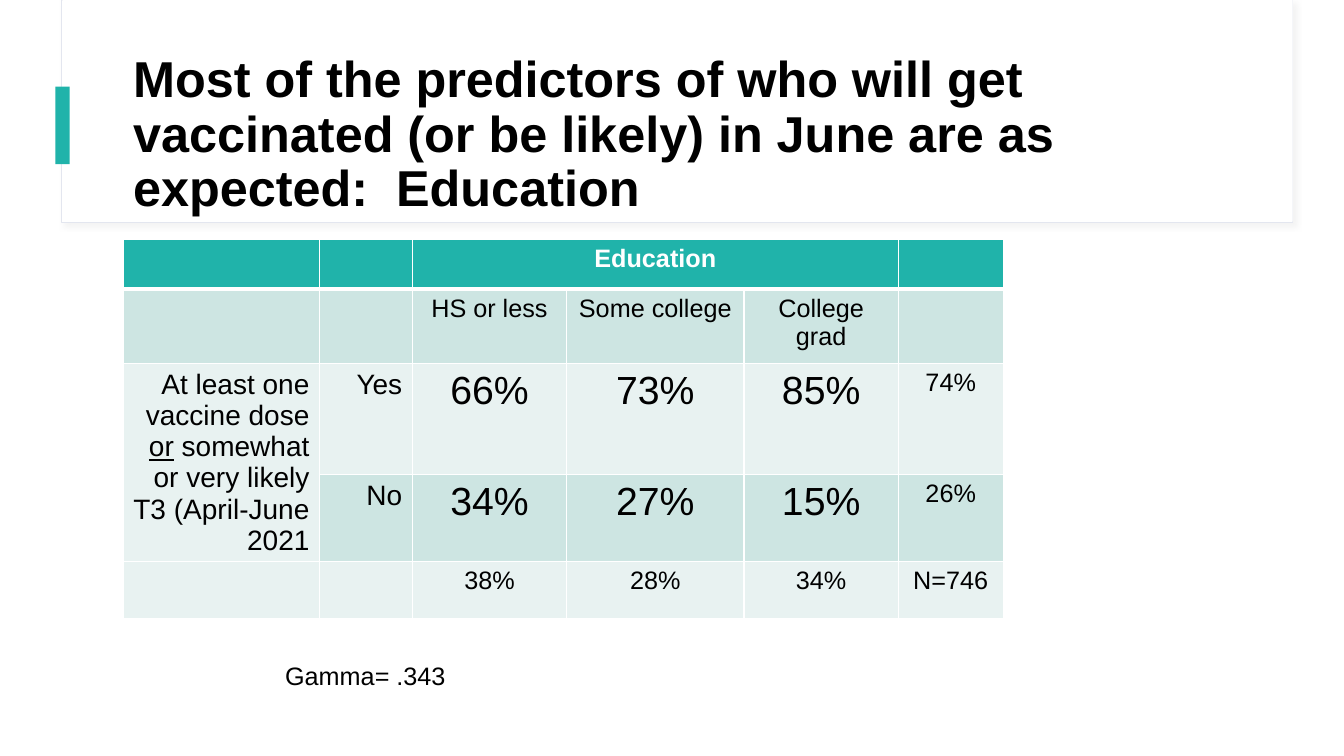
"""Build the slide on education and vaccination."""
from dataclasses import dataclass

from lxml import etree
from pptx import Presentation
from pptx.dml.color import RGBColor
from pptx.enum.shapes import MSO_SHAPE
from pptx.enum.text import MSO_ANCHOR, MSO_AUTO_SIZE, PP_ALIGN
from pptx.oxml.ns import qn
from pptx.util import Inches, Pt

RECT = MSO_SHAPE.RECTANGLE
MIDDLE = MSO_ANCHOR.MIDDLE
FIXED, GROW = MSO_AUTO_SIZE.NONE, MSO_AUTO_SIZE.SHAPE_TO_FIT_TEXT
LEFT, CENTER, RIGHT = PP_ALIGN.LEFT, PP_ALIGN.CENTER, PP_ALIGN.RIGHT

FONT = "Arial"
BLACK, WHITE, TEAL = "000000", "FFFFFF", "20B3AA"
BANDS = ("E8F2F1", "CDE5E2")
TITLE = ("Most of the predictors of who will get vaccinated (or be likely) "
         "in June are as expected:  Education")
WIDTHS = (1.95, 0.92, 1.53, 1.76, 1.53, 1.04)
HEIGHTS = (0.49, 0.74, 1.1, 0.86, 0.57)
ROWS = (
    ("", "", "Education", "", "", ""),
    ("", "", "HS or less", "Some college", "College grad", ""),
    ("At least one vaccine dose _or_ somewhat or very likely T3 (April-June 2021",
     "Yes", "66%", "73%", "85%", "74%"),
    ("", "No", "34%", "27%", "15%", "26%"),
    ("", "", "38%", "28%", "34%", "N=746"),
)


@dataclass
class Block:
    """A plain rectangle, with its place in inches."""
    left: float
    top: float
    width: float
    height: float
    fill: str
    line: str = ""
    shade: str = ""


BLOCKS = (
    Block(0.61, 0, 12.21, 2.21, WHITE, "E3E6EF", "D9D9D9"),
    Block(0.62, 0, 12.2, 2.2, WHITE),
    Block(0.55, 0.86, 0.14, 0.77, TEAL),
)


def paint(form, color: str) -> None:
    """Fill a shape, cell or line with one colour."""
    form.fill.solid()
    form.fill.fore_color.rgb = RGBColor.from_string(color)


def add_color(parent, color: str):
    """Add a colour element to an XML parent."""
    return etree.SubElement(parent, qn("a:srgbClr"), val=color)


def style(part, size: float, color: str = BLACK, bold: bool = False) -> None:
    """Format the runs of a paragraph."""
    for run in part.runs:
        run.font.name, run.font.size, run.font.bold = FONT, Pt(size), bold
        run.font.color.rgb = RGBColor.from_string(color)


def add_block(slide, block: Block):
    """Draw a block and return its shape."""
    shape = slide.shapes.add_shape(
        RECT, Inches(block.left), Inches(block.top),
        Inches(block.width), Inches(block.height))
    paint(shape, block.fill)
    shape.shadow.inherit = False
    if block.line:
        paint(shape.line, block.line)
        shape.line.width = Pt(0.75)
    else:
        shape.line.fill.background()
    if block.shade:
        effects = shape.element.spPr.find(qn("a:effectLst"))
        shade = etree.SubElement(
            effects, qn("a:outerShdw"), blurRad=str(Pt(4)), dist=str(Pt(3)),
            dir="2700000", algn="tl", rotWithShape="0")
        etree.SubElement(add_color(shade, block.shade), qn("a:alpha"), val="30000")
    return shape


def set_title(slide, last) -> None:
    """Place the title above the last block."""
    title = slide.shapes.title
    title.left, title.top = Inches(1.22), Inches(0.6)
    title.width, title.height = Inches(11.12), Inches(1.5)
    frame = title.text_frame
    frame.text = TITLE
    frame.word_wrap, frame.auto_size = True, FIXED
    frame.vertical_anchor = MIDDLE
    part = frame.paragraphs[0]
    part.alignment, part.line_spacing = LEFT, 0.9
    style(part, 36, BLACK, True)
    last.element.addnext(title.element)


def set_edges(cell, top: float, bottom: float) -> None:
    """Give a cell white borders, with widths in points."""
    props = cell._tc.get_or_add_tcPr()
    edges = (("L", 1), ("R", 1), ("T", top), ("B", bottom))
    for spot, (side, width) in enumerate(edges):
        line = etree.Element(qn(f"a:ln{side}"), w=str(Pt(width)))
        add_color(etree.SubElement(line, qn("a:solidFill")), WHITE)
        props.insert(spot, line)


def set_cell(cell, text: str, row: int, col: int) -> None:
    """Fill in one cell; underscores enclose underlined words."""
    head = row == 0
    paint(cell, TEAL if head else BANDS[row % 2])
    set_edges(cell, 3 if row == 1 else 1, 3 if head else 1)
    part = cell.text_frame.paragraphs[0]
    part.alignment = RIGHT if col < 2 else CENTER
    if text:
        for spot, piece in enumerate(text.split("_")):
            run = part.add_run()
            run.text, run.font.underline = piece, spot % 2 == 1
    size = 20 if col < 2 else 28 if row in (2, 3) and col < 5 else 18
    style(part, size, WHITE if head else BLACK, head)


def add_grid(slide) -> None:
    """Add the table of vaccination by education."""
    grid = slide.shapes.add_table(
        len(ROWS), len(WIDTHS), Inches(1.22), Inches(2.38),
        Inches(sum(WIDTHS)), Inches(sum(HEIGHTS))).table
    grid.first_row = grid.horz_banding = False
    for col, width in enumerate(WIDTHS):
        grid.columns[col].width = Inches(width)
    for row, height in enumerate(HEIGHTS):
        grid.rows[row].height = Inches(height)
        for col, text in enumerate(ROWS[row]):
            set_cell(grid.cell(row, col), text, row, col)
    grid.cell(0, 2).merge(grid.cell(0, 4))
    grid.cell(2, 0).merge(grid.cell(3, 0))


def add_note(slide) -> None:
    """Add the gamma value below the table."""
    frame = slide.shapes.add_textbox(
        Inches(2.73), Inches(6.5), Inches(1.85), Inches(0.4)).text_frame
    frame.text = "Gamma= .343"
    frame.word_wrap, frame.auto_size = False, GROW
    style(frame.paragraphs[0], 18)


def main() -> None:
    """Build and save the slide."""
    deck = Presentation()
    deck.slide_width, deck.slide_height = Inches(13.33), Inches(7.5)
    slide = deck.slides.add_slide(deck.slide_layouts[5])
    shapes = [add_block(slide, block) for block in BLOCKS]
    set_title(slide, shapes[-1])
    add_grid(slide)
    add_note(slide)
    deck.save("out.pptx")


if __name__ == "__main__":
    main()
